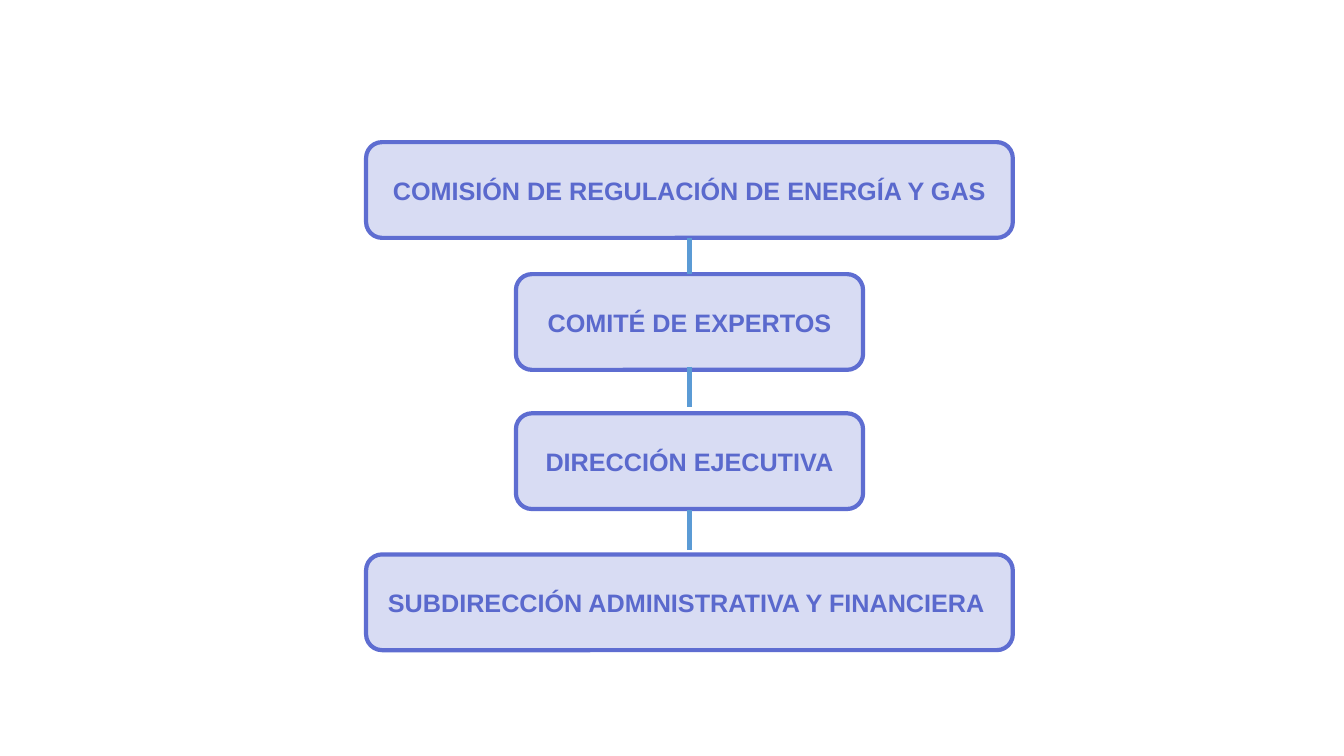
from lxml.etree import SubElement
from pptx import Presentation
from pptx.dml.color import RGBColor
from pptx.enum.shapes import MSO_CONNECTOR, MSO_SHAPE
from pptx.enum.text import MSO_ANCHOR, PP_ALIGN
from pptx.oxml.ns import qn
from pptx.util import Pt


def color(hex_value):
    return RGBColor.from_string(hex_value)


def write(shape, text, font="Arial", size=18, bold=True, ink="5A69CD"):
    frame = shape.text_frame
    frame.word_wrap = True
    frame.vertical_anchor = MSO_ANCHOR.MIDDLE
    para = frame.paragraphs[0]
    para.alignment = PP_ALIGN.CENTER
    span = para.add_run()
    span.text = text
    span.font.name = font
    span.font.size = Pt(size)
    span.font.bold = bold
    span.font.color.rgb = color(ink)


deck = Presentation()
deck.slide_width = Pt(960)
deck.slide_height = Pt(540)
page = deck.slides.add_slide(deck.slide_layouts[6])

CENTER = 492.5
BOX_HEIGHT = 68.4
WIDE, NARROW = 462, 248

# Levels of the organisation: text, top, width
levels = [
    ("COMISIÓN DE REGULACIÓN DE ENERGÍA Y GAS", 101.5, WIDE),
    ("COMITÉ DE EXPERTOS", 195.8, NARROW),
    ("DIRECCIÓN EJECUTIVA", 295.2, NARROW),
    ("SUBDIRECCIÓN ADMINISTRATIVA Y FINANCIERA ", 396, WIDE),
]
for text, top, width in levels:
    box = page.shapes.add_shape(
        MSO_SHAPE.ROUNDED_RECTANGLE,
        Pt(CENTER - width / 2), Pt(top), Pt(width), Pt(BOX_HEIGHT))
    box.shadow.inherit = False
    box.fill.solid()
    box.fill.fore_color.rgb = color("D8DCF3")
    box.line.color.rgb = color("5E6DD1")
    box.line.width = Pt(3)
    write(box, text)

# Links between levels: start and end heights
for start, end in [(169.9, 195.8), (262, 290.8), (364.3, 393.1)]:
    link = page.shapes.add_connector(
        MSO_CONNECTOR.STRAIGHT, Pt(CENTER), Pt(start), Pt(CENTER), Pt(end))
    link.line.color.rgb = color("5B9BD5")
    link.line.width = Pt(3)
    SubElement(link.element.spPr, qn("a:effectLst"))

deck.save("out.pptx")
